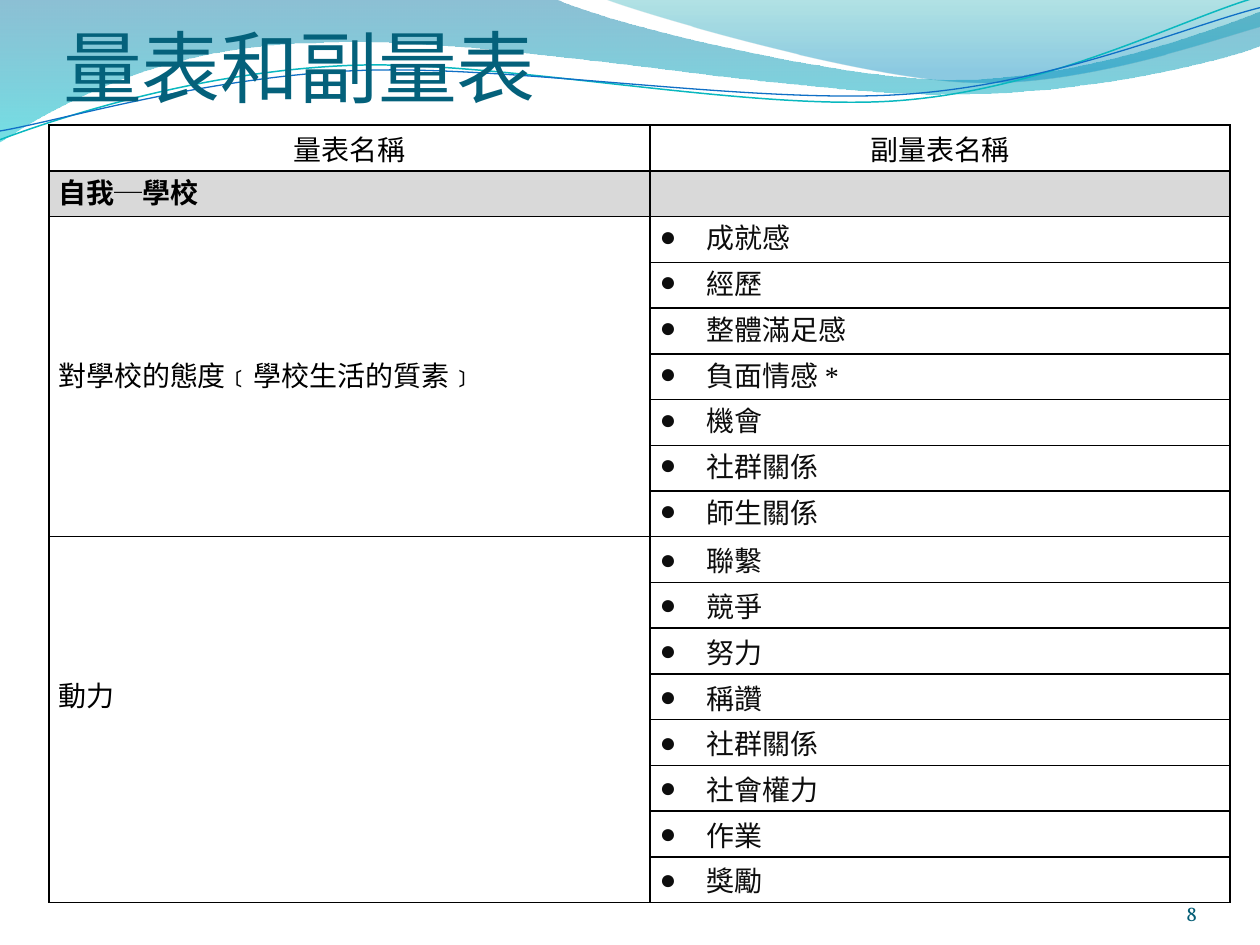
import lxml.etree
import pptx
import pptx.dml.color
import pptx.enum.text
import pptx.oxml.ns
import pptx.util

Pt = pptx.util.Pt
Align = pptx.enum.text.PP_ALIGN
Anchor = pptx.enum.text.MSO_ANCHOR
SERIF, SANS, CJK = "Times New Roman", "Noto Sans CJK TC", "Noto Sans CJK TC"
NO_STYLE = "{2D5ABB26-0587-4C30-8999-92F81FD0307C}"

# Each outline is a start point, then steps: one point is a line, three a curve.
WIDE_BAND = [(0, -0.7), [(317, -0.7)],
             [(342.7, 12.2), (478, 45.4), (545.8, 45.4)],
             [(614.2, 45.4), (689.8, 18.7), (720, 6.5)], [(720.7, 25.9)],
             [(707.8, 31.7), (626.4, 54.7), (537.1, 54)],
             [(447.8, 54), (275, 20.2), (185, 24.5)],
             [(92.9, 25.2), (33.1, 59.8), (-0.7, 81.4)], [(0, -0.7)]]
RIGHT_BAND = [(344.9, -0.7), [(366.5, 7.9), (491, 44.6), (553.7, 46.8)],
              [(616.3, 49.7), (691.9, 23), (720, 15.1)], [(720, 0)],
              [(344.9, -0.7)]]
TEAL_LINE = [(-1.4, 62.9), [(33.7, 51.6), (114, 29.4), (199.8, 29.9)],
             [(284.8, 30.3), (425.8, 67.2), (512.4, 64.8)],
             [(599, 62.4), (676.4, 25.7), (719.5, 15.5)]]
BLUE_LINE = [(-1.2, 57.9), [(33, 53.8), (118.3, 32.5), (204, 33)],
             [(290.5, 33.4), (429, 63.1), (515.5, 61.3)],
             [(601.3, 59.7), (678.5, 30.1), (721.4, 21.4)]]

# Scale name, its subscales, and how their text is anchored.
SCALES = [
    ("對學校的態度﹝學校生活的質素﹞",
     ["成就感", "經歷", "整體滿足感", "負面情感 *", "機會", "社群關係", "師生關係"],
     Anchor.TOP),
    ("動力",
     ["聯繫", "競爭", "努力", "稱讚", "社群關係", "社會權力", "作業", "獎勵"],
     Anchor.MIDDLE),
]


def color(value):
    return pptx.dml.color.RGBColor.from_string(value)


def add_xml(parent, tag, **attributes):
    return lxml.etree.SubElement(parent, pptx.oxml.ns.qn(tag), attributes)


def add_run(para, text, size, font, hex_color, bold=False):
    span = para.add_run()
    span.text = text
    span.font.size = Pt(size)
    span.font.name = font
    span.font.bold = bold
    span.font.color.rgb = color(hex_color)
    add_xml(span.font._element, "a:ea", typeface=CJK)


def add_outline(page, outline, close):
    """Draw the steps as lines, then join each group of three into a curve."""
    start, *steps = outline
    builder = page.shapes.build_freeform(Pt(start[0]), Pt(start[1]))
    builder.add_line_segments(
        [(Pt(x), Pt(y)) for step in steps for x, y in step], close=close)
    shape = builder.convert_to_shape()
    shape.shadow.inherit = False
    segments = iter(list(shape._element.iter(pptx.oxml.ns.qn("a:lnTo"))))
    for step in steps:
        first, *others = [next(segments) for _ in step]
        if others:
            first.tag = pptx.oxml.ns.qn("a:cubicBezTo")
        for segment in others:
            first.append(segment[0])
            segment.getparent().remove(segment)
    return shape


def add_band(page, outline, stops):
    """Draw a wave with a top-to-bottom gradient of (position, colour, opacity)."""
    band = add_outline(page, outline, True)
    band.line.fill.background()
    band.fill.gradient()
    band.fill.gradient_angle = 270
    for stop, (position, hex_color, opacity) in zip(band.fill.gradient_stops, stops):
        stop.position = position
        stop.color.rgb = color(hex_color)
        add_xml(stop._gs[0], "a:alpha", val=str(opacity * 1000))


def add_wave_line(page, outline, hex_color, width):
    wave = add_outline(page, outline, False)
    wave.rotation = 357.3
    wave.fill.background()
    wave.line.color.rgb = color(hex_color)
    wave.line.width = Pt(width)


def place_title(page, text):
    title = page.shapes.title
    title.left, title.top, title.width, title.height = Pt(36), Pt(15), Pt(648), Pt(50)
    page.shapes._spTree.append(title._element)  # in front of the waves
    frame = title.text_frame
    frame.auto_size = pptx.enum.text.MSO_AUTO_SIZE.NONE
    frame.vertical_anchor = Anchor.BOTTOM
    frame.margin_left = frame.margin_right = frame.margin_bottom = 0
    frame.paragraphs[0].alignment = Align.LEFT
    add_run(frame.paragraphs[0], text, 45, "Arial", "04617B")


def format_cell(cell, edges="LRTB", anchor=Anchor.TOP, fill=None):
    """Set up a cell with lines on the given edges; return its paragraph."""
    cell.margin_left = cell.margin_right = Pt(5.4)
    cell.margin_top = cell.margin_bottom = 0
    cell.vertical_anchor = anchor
    for edge in "LRTB":
        line = add_xml(cell._tc.tcPr, "a:ln" + edge, w=str(Pt(1)))
        if edge in edges:
            add_xml(add_xml(line, "a:solidFill"), "a:srgbClr", val="000000")
        else:
            add_xml(line, "a:noFill")
    if fill:
        cell.fill.solid()
        cell.fill.fore_color.rgb = color(fill)
    else:
        cell.fill.background()
    return cell.text_frame.paragraphs[0]


def set_empty_size(para):
    """Keep an empty cell from stretching its row."""
    add_xml(para._p, "a:endParaRPr", sz="1600")


def fill_subscale(cell, text, anchor):
    para = format_cell(cell, anchor=anchor)
    para.alignment = Align.JUSTIFY
    properties = para._p.get_or_add_pPr()
    properties.set("marL", str(Pt(27)))
    properties.set("indent", str(Pt(-27)))
    add_xml(properties, "a:buFont", typeface=SERIF)
    add_xml(properties, "a:buChar", char="●")
    add_xml(add_xml(properties, "a:tabLst"), "a:tab", pos=str(Pt(12)), algn="l")
    name, star, _ = text.partition("*")
    add_run(para, name, 16, SANS, "0D0D0D")
    if star:
        add_run(para, star, 16, SERIF, "000000")


def fill_scale(table, first, name, subscales, anchor):
    """Fill one block of rows, with the scale name in its middle row."""
    last = len(subscales) - 1
    for index, subscale in enumerate(subscales):
        edges = "LR" + "T" * (index == 0) + "B" * (index == last)
        para = format_cell(table.cell(first + index, 0), edges)
        if index == last // 2:
            add_run(para, name, 16, SERIF, "000000")
        else:
            set_empty_size(para)
        fill_subscale(table.cell(first + index, 1), subscale, anchor)


def add_scale_table(page):
    count = 2 + sum(len(subscales) for _, subscales, _ in SCALES)
    frame = page.shapes.add_table(count, 2, Pt(28), Pt(71.5), Pt(675), Pt(444.4))
    table = frame.table
    table.first_row = table.horz_banding = False
    table._tbl.tblPr.find(pptx.oxml.ns.qn("a:tableStyleId")).text = NO_STYLE
    for column, width in zip(table.columns, (343.5, 331.5)):
        column.width = Pt(width)
    for column, heading in enumerate(("量表名稱", "副量表名稱")):
        para = format_cell(table.cell(0, column), anchor=Anchor.MIDDLE)
        para.alignment = Align.CENTER
        add_run(para, heading, 16, SERIF, "000000")
    section = format_cell(table.cell(1, 0), fill="D9D9D9")
    add_run(section, "自我─學校", 16, SANS, "000000", bold=True)
    set_empty_size(format_cell(table.cell(1, 1), fill="D9D9D9"))
    first = 2
    for name, subscales, anchor in SCALES:
        fill_scale(table, first, name, subscales, anchor)
        first += len(subscales)


def add_page_number(page, number):
    box = page.shapes.add_textbox(Pt(624), Pt(500.4), Pt(60), Pt(28.8))
    frame = box.text_frame
    frame.word_wrap = True
    frame.vertical_anchor = Anchor.BOTTOM
    frame.margin_left = frame.margin_right = frame.margin_top = frame.margin_bottom = 0
    frame.paragraphs[0].alignment = Align.RIGHT
    add_run(frame.paragraphs[0], number, 12, "Vollkorn", "045D75")


def main():
    deck = pptx.Presentation()
    deck.slide_width, deck.slide_height = Pt(720), Pt(540)
    page = deck.slides.add_slide(deck.slide_layouts[5])
    add_band(page, WIDE_BAND, [(0, "0074A1", 45), (1, "00C6CF", 55)])
    add_band(page, RIGHT_BAND, [(0, "00A1A9", 30), (0.8, "008BBF", 45)])
    add_wave_line(page, TEAL_LINE, "0AB8BF", 0.85)
    add_wave_line(page, BLUE_LINE, "0F6FC6", 0.75)
    place_title(page, "量表和副量表")
    add_scale_table(page)
    add_page_number(page, "8")
    deck.save("out.pptx")


if __name__ == "__main__":
    main()
